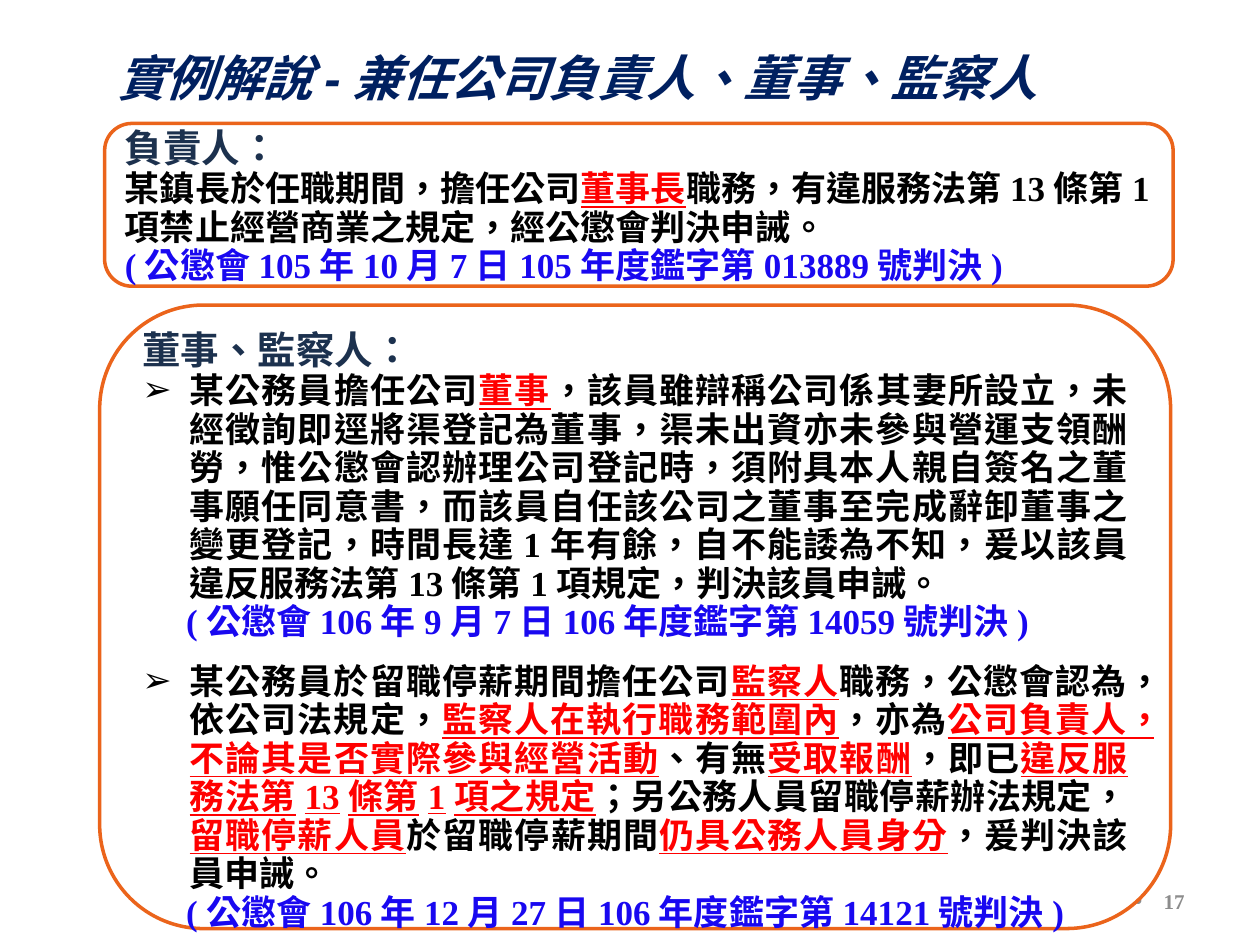
from lxml.etree import SubElement
from pptx import Presentation
from pptx.dml.color import RGBColor
from pptx.enum.lang import MSO_LANGUAGE_ID
from pptx.enum.shapes import MSO_SHAPE
from pptx.enum.text import MSO_ANCHOR, PP_ALIGN
from pptx.oxml.ns import qn
from pptx.util import Cm, Pt

WHITE = RGBColor(0xFF, 0xFF, 0xFF)
BLACK = RGBColor(0, 0, 0)
RED = RGBColor(0xFF, 0, 0)
BLUE = RGBColor(0x19, 0x08, 0xF0)
NAVY = RGBColor(0, 0x20, 0x60)
SLATE = RGBColor(0x1C, 0x31, 0x4E)
ORANGE = RGBColor(0xEB, 0x64, 0x1B)
GRAY = RGBColor(0x8C, 0x8C, 0x8C)
SERIF = "Times New Roman"


def add_run(p, text, size=20, font=SERIF, color=BLACK, bold=True,
            italic=False, underline=False):
    r = p.add_run()
    r.text = text
    f = r.font
    f.size, f.name, f.bold, f.italic = Pt(size), font, bold, italic
    f.underline = underline
    f.color.rgb = color
    f.language_id = MSO_LANGUAGE_ID.TRADITIONAL_CHINESE


def set_indent(p, left, hanging=0, bullet=None, percent=100):
    pPr = p._p.get_or_add_pPr()
    pPr.set("marL", str(Cm(left)))
    pPr.set("indent", str(-Cm(hanging)))
    if bullet:
        SubElement(pPr, qn("a:buSzPct"), val=str(percent * 1000))
        SubElement(pPr, qn("a:buFont"), typeface="Arial")
        SubElement(pPr, qn("a:buChar"), char=bullet)


class SlideBuilder:
    def __init__(self, slide):
        self.s = slide

    def text_box(self, x, y, w, h, anchor=MSO_ANCHOR.TOP):
        tf = self.s.shapes.add_textbox(Cm(x), Cm(y), Cm(w), Cm(h)).text_frame
        tf.word_wrap = True
        tf.vertical_anchor = anchor
        return tf

    def panel(self, x, y, w, h, anchor=MSO_ANCHOR.MIDDLE):
        sp = self.s.shapes.add_shape(MSO_SHAPE.ROUNDED_RECTANGLE,
                                     Cm(x), Cm(y), Cm(w), Cm(h))
        sp.shadow.inherit = False
        sp.fill.solid()
        sp.fill.fore_color.rgb = WHITE
        sp.line.color.rgb = ORANGE
        sp.line.width = Pt(2)
        tf = sp.text_frame
        tf.word_wrap = True
        tf.vertical_anchor = anchor
        return tf

    def paragraph(self, tf, spacing=22, after=0):
        p = tf.paragraphs[0] if not tf.paragraphs[0].runs else tf.add_paragraph()
        p.alignment = PP_ALIGN.JUSTIFY
        if spacing:
            p.line_spacing = Pt(spacing)
        if after:
            p.space_after = Pt(after)
        return p

    def heading(self, tf, text, font, spacing=None):
        add_run(self.paragraph(tf, spacing), text, size=22, font=font, color=SLATE)

    def body(self, tf, parts, bullet=None):
        """Parts alternate between plain text and underlined red text."""
        p = self.paragraph(tf)
        if bullet:
            set_indent(p, 0.95, 0.95, bullet)
        for i, text in enumerate(parts):
            marked = i % 2 == 1
            add_run(p, text, color=RED if marked else BLACK, underline=marked)

    def citation(self, tf, text, left=0, after=0):
        p = self.paragraph(tf, after=after)
        set_indent(p, left)
        add_run(p, text, color=BLUE)


def main():
    prs = Presentation()
    prs.slide_width, prs.slide_height = Cm(25.4), Cm(19.05)
    b = SlideBuilder(prs.slides.add_slide(prs.slide_layouts[6]))

    tf = b.text_box(18.21, 17.65, 5.92, 1.02, MSO_ANCHOR.MIDDLE)
    p = tf.paragraphs[0]
    p.alignment = PP_ALIGN.RIGHT
    set_indent(p, 0.6, 0.6, "●", 70)
    add_run(p, "17", size=12, color=GRAY)

    tf = b.panel(2.11, 2.49, 21.54, 3.28)
    b.heading(tf, "負責人：", "Arial")
    b.body(tf, ["某鎮長於任職期間，擔任公司", "董事長",
                "職務，有違服務法第13條第1項禁止經營商業之規定，經公懲會判決申誡。"])
    b.citation(tf, "(公懲會105年10月7日105年度鑑字第013889號判決)")

    tf = b.panel(2.01, 6.15, 21.59, 12.57, MSO_ANCHOR.TOP)
    tf.margin_top = tf.margin_bottom = 0
    b.heading(tf, "董事、監察人：", "Noto Sans CJK SC", 21)
    b.body(tf, ["某公務員擔任公司", "董事",
                "，該員雖辯稱公司係其妻所設立，未經徵詢即逕將渠登記為董事，"
                "渠未出資亦未參與營運支領酬勞，惟公懲會認辦理公司登記時，"
                "須附具本人親自簽名之董事願任同意書，而該員自任該公司之董事"
                "至完成辭卸董事之變更登記，時間長達1年有餘，自不能諉為不知，"
                "爰以該員違反服務法第13條第1項規定，判決該員申誡。"], "➢")
    b.citation(tf, "(公懲會106年9月7日106年度鑑字第14059號判決)", 0.88, 12)
    b.body(tf, ["某公務員於留職停薪期間擔任公司", "監察人",
                "職務，公懲會認為，依公司法規定，", "監察人在執行職務範圍內",
                "，亦為", "公司負責人，不論其是否實際參與經營活動",
                "、有無", "受取報酬", "，即已", "違反服務法第13條第1項之規定",
                "；另公務人員留職停薪辦法規定，", "留職停薪人員",
                "於留職停薪期間", "仍具公務人員身分", "，爰判決該員申誡。"], "➢")
    b.citation(tf, "(公懲會106年12月27日106年度鑑字第14121號判決)", 0.88)

    tf = b.text_box(2.11, 0.84, 19.43, 1.45)
    add_run(tf.paragraphs[0], "實例解說-兼任公司負責人、董事、監察人",
            size=28, font="Arial", color=NAVY, italic=True)

    prs.save("out.pptx")


if __name__ == "__main__":
    main()
